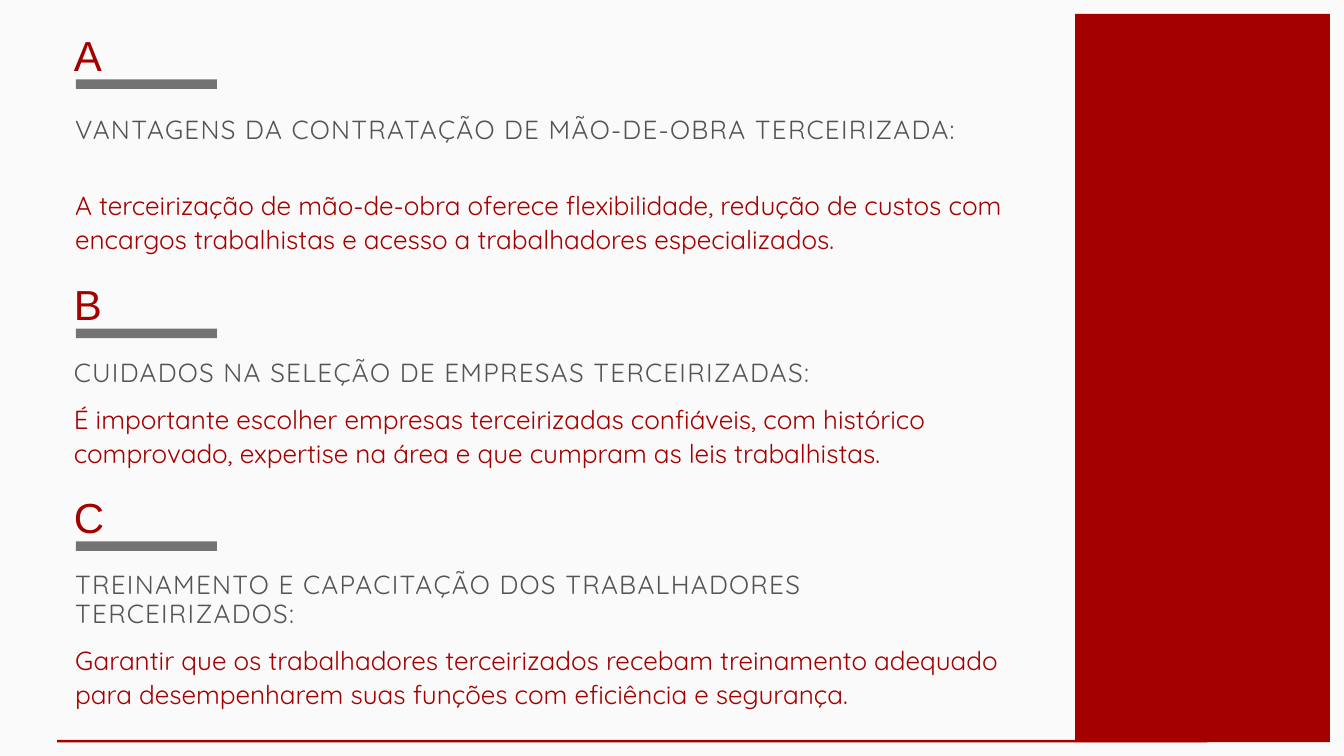
from pptx import Presentation
from pptx.dml.color import RGBColor
from pptx.enum.shapes import MSO_SHAPE
from pptx.util import Cm, Pt

RECTANGLE = MSO_SHAPE.RECTANGLE
BLANK_LAYOUT = 6

COLORS = {
    "background": "FAFAFA",
    "red": "A40000",
    "bar": "737373",
    "heading": "545454",
}

SECTIONS = [
    {
        "letter": "A",
        "heading": "VANTAGENS DA CONTRATAÇÃO DE MÃO-DE-OBRA TERCEIRIZADA:",
        "body": "A terceirização de mão-de-obra oferece flexibilidade, redução de custos "
                "com encargos trabalhistas e acesso a trabalhadores especializados.",
        "left": 2.84, "letter_top": 1.22, "heading_top": 4.39, "body_top": 7.06,
        "heading_height": 2.21,
    },
    {
        "letter": "B",
        "heading": "CUIDADOS NA SELEÇÃO DE EMPRESAS TERCEIRIZADAS:",
        "body": "É importante escolher empresas terceirizadas confiáveis, com histórico "
                "comprovado, expertise na área e que cumpram as leis trabalhistas.",
        "left": 2.79, "letter_top": 10.64, "heading_top": 13.56, "body_top": 15.14,
        "heading_height": 1.12,
    },
    {
        "letter": "C",
        "heading": "TREINAMENTO E CAPACITAÇÃO DOS TRABALHADORES TERCEIRIZADOS:",
        "body": "Garantir que os trabalhadores terceirizados recebam treinamento adequado "
                "para desempenharem suas funções com eficiência e segurança.",
        "left": 2.84, "letter_top": 18.69, "heading_top": 21.59, "body_top": 24.28,
        "heading_height": 2.21,
    },
]


def color(name):
    return RGBColor.from_string(COLORS[name])


def add_rectangle(shapes, left, top, width, height, fill):
    shape = shapes.add_shape(RECTANGLE, Cm(left), Cm(top), Cm(width), Cm(height))
    shape.shadow.inherit = False
    shape.fill.solid()
    shape.fill.fore_color.rgb = color(fill)
    shape.line.fill.background()


def add_text(shapes, left, top, width, height, text, font, size, line_spacing,
             text_color, tracking=0):
    box = shapes.add_textbox(Cm(left), Cm(top), Cm(width), Cm(height))
    text_frame = box.text_frame
    text_frame.word_wrap = True
    text_frame.margin_left = text_frame.margin_right = 0
    text_frame.margin_top = text_frame.margin_bottom = 0
    text_frame.text = text
    paragraph = text_frame.paragraphs[0]
    paragraph.line_spacing = Pt(line_spacing)
    run = paragraph.runs[0]
    run.font.name = font
    run.font.size = Pt(size)
    run.font.color.rgb = color(text_color)
    if tracking:
        run._r.get_or_add_rPr().set("spc", str(tracking))


def add_marker(slide, section):
    shapes = slide.shapes.add_group_shape().shapes
    top = section["letter_top"]
    add_text(shapes, 2.79, top, 20.78, 1.96, section["letter"],
             "Arial", 45, 51.3, "red", -50)
    add_rectangle(shapes, 2.87, top + 1.78, 5.33, 0.36, "bar")


def add_section_text(slide, section):
    shapes = slide.shapes.add_group_shape().shapes
    left = section["left"]
    add_text(shapes, left, section["body_top"], 35.8, 2.49, section["body"],
             "Quicksand", 28, 36.4, "red")
    add_text(shapes, left, section["heading_top"], 35.8, section["heading_height"],
             section["heading"], "Quicksand", 28, 30.8, "heading", 140)


def main():
    presentation = Presentation()
    presentation.slide_width = Cm(50.8)
    presentation.slide_height = Cm(28.58)
    slide = presentation.slides.add_slide(presentation.slide_layouts[BLANK_LAYOUT])
    slide.background.fill.solid()
    slide.background.fill.fore_color.rgb = color("background")

    add_rectangle(slide.shapes, 40.64, 0.53, 9.63, 27.53, "red")
    for section in SECTIONS:
        add_marker(slide, section)
        add_section_text(slide, section)
    add_rectangle(slide.shapes, 2.16, 27.97, 43.48, 0.1, "red")

    presentation.save("out.pptx")


if __name__ == "__main__":
    main()
